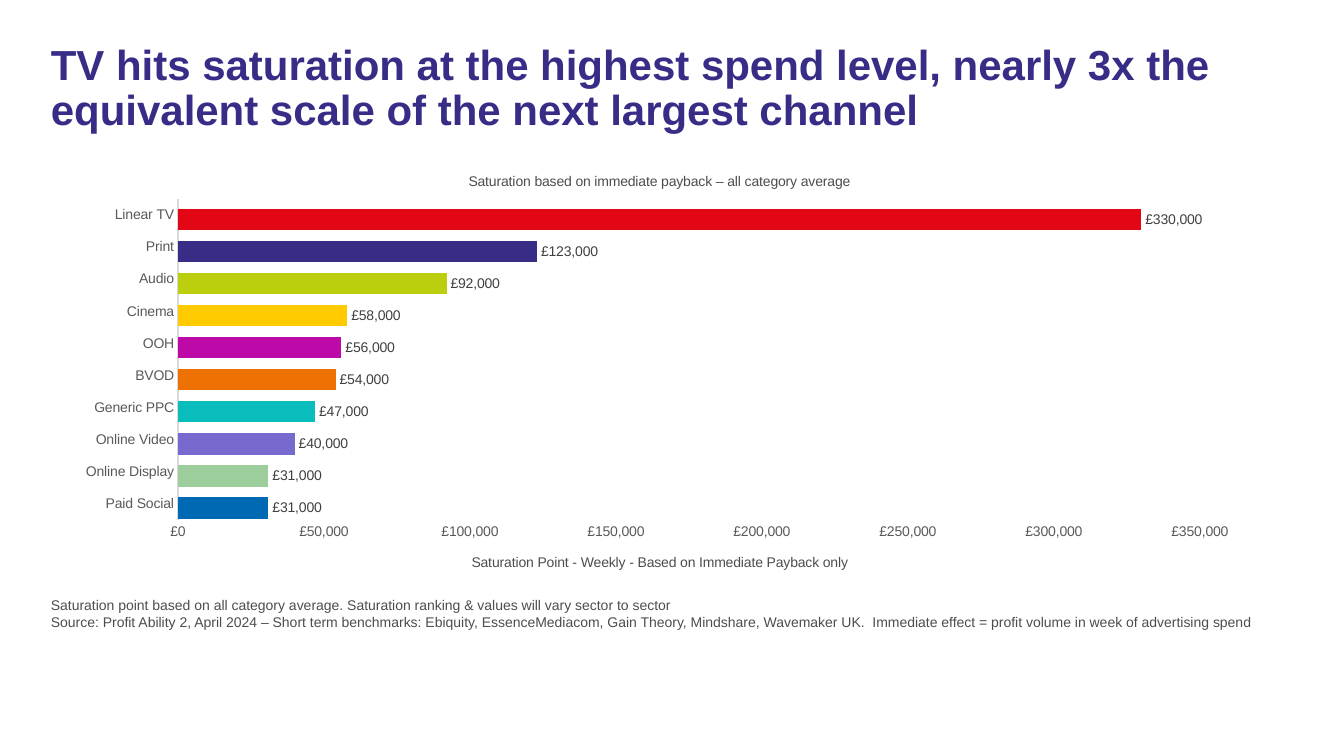
from lxml import etree
from pptx import Presentation
from pptx.chart.data import CategoryChartData
from pptx.dml.color import RGBColor
from pptx.enum.chart import XL_CHART_TYPE, XL_LABEL_POSITION, XL_TICK_MARK
from pptx.enum.text import MSO_ANCHOR
from pptx.oxml.ns import qn
from pptx.util import Pt

BAR = XL_CHART_TYPE.BAR_CLUSTERED
OUT_END = XL_LABEL_POSITION.OUTSIDE_END
NO_TICK = XL_TICK_MARK.NONE
TOP = MSO_ANCHOR.TOP
PX = 914400 / 100.8
POUNDS = '"£"#,##0'

THEME = {
    "face": "Arial",
    "head": {"size": Pt(30), "bold": True, "color": "372D87"},
    "note": {"size": Pt(10), "bold": False, "color": "4D4D4D"},
    "axis": {"size": Pt(10), "bold": False, "color": "595959"},
    "label": {"size": Pt(10), "bold": False, "color": "404040"},
    "line": "D9D9D9",
    "spare": ["0069B4", "E10514"],
}
CHANNELS = [
    ("Paid Social", 31000, "0069B4"),
    ("Online Display", 31000, "9CCD9A"),
    ("Online Video", 40000, "766ACE"),
    ("Generic PPC", 47000, "09BDBD"),
    ("BVOD", 54000, "EE7203"),
    ("OOH", 56000, "BD09A7"),
    ("Cinema", 58000, "FFCA00"),
    ("Audio", 92000, "BCCF0F"),
    ("Print", 123000, "372D87"),
    ("Linear TV", 330000, "E30615"),
]
TEXTS = [
    ((41, 39, 1250, 113), "head", 0.9, [
        "TV hits saturation at the highest spend level, nearly 3x the "
        "equivalent scale of the next largest channel"]),
    ((41, 592, 1250, 33), "note", 1.0, [
        "Saturation point based on all category average. "
        "Saturation ranking & values will vary sector to sector",
        "Source: Profit Ability 2, April 2024 – Short term benchmarks: "
        "Ebiquity, EssenceMediacom, Gain Theory, Mindshare, Wavemaker UK.  "
        "Immediate effect = profit volume in week of advertising spend"]),
]
FRAME = (61, 152, 1190, 436)


def style(font, role):
    font.name = THEME["face"]
    for key, value in THEME[role].items():
        if key == "color":
            font.color.rgb = RGBColor.from_string(value)
        else:
            setattr(font, key, value)


def place(node, index, **spots):
    """Pin a chart part at slide px, stored as shares of the chart frame."""
    for old in node.findall(qn("c:layout")):
        node.remove(old)
    layout = etree.Element(qn("c:layout"))
    manual = etree.SubElement(layout, qn("c:manualLayout"))
    if "w" in spots:
        etree.SubElement(manual, qn("c:layoutTarget")).set("val", "inner")
    for key in "xy":
        etree.SubElement(manual, qn(f"c:{key}Mode")).set("val", "edge")
    for key, value in spots.items():
        start = {"x": FRAME[0], "y": FRAME[1]}.get(key, 0)
        span = FRAME[2] if key in "xw" else FRAME[3]
        share = f"{(value - start) / span:.4f}"
        etree.SubElement(manual, qn(f"c:{key}")).set("val", share)
    node.insert(index, layout)


deck = Presentation()
deck.slide_width, deck.slide_height = round(1344 * PX), round(756 * PX)
slide = deck.slides.add_slide(deck.slide_layouts[6])

for box, role, gap, lines in TEXTS:
    frame = slide.shapes.add_textbox(*(round(n * PX) for n in box)).text_frame
    frame.word_wrap = True
    frame.vertical_anchor = TOP
    for i, line in enumerate(lines):
        para = frame.add_paragraph() if i else frame.paragraphs[0]
        para.line_spacing = gap
        run = para.add_run()
        run.text = line
        style(run.font, role)

names, values, colors = zip(*CHANNELS)
data = CategoryChartData(number_format=POUNDS)
data.categories = names
data.add_series("Series 1", values)
for name in ("Series 2", "Series 3"):
    data.add_series(name, [None] * len(names))
chart = slide.shapes.add_chart(BAR, *(round(n * PX) for n in FRAME), data).chart
chart.has_legend = False
style(chart.font, "axis")

plot = chart.plots[0]
plot.gap_width, plot.overlap, plot.vary_by_categories = 10, 80, False
for series, color in zip(plot.series, ["372D87", *THEME["spare"]]):
    series.format.fill.solid()
    series.format.fill.fore_color.rgb = RGBColor.from_string(color)
    series.invert_if_negative = False
main = plot.series[0]
for i, color in enumerate(colors):
    fill = main.points[i].format.fill
    fill.solid()
    fill.fore_color.rgb = RGBColor.from_string(color)
labels = main.data_labels
for key, value in {"show_value": True, "position": OUT_END,
                   "number_format": POUNDS,
                   "number_format_is_linked": False}.items():
    setattr(labels, key, value)
style(labels.font, "label")

cats, vals = chart.category_axis, chart.value_axis
for axis in (cats, vals):
    axis.major_tick_mark = axis.minor_tick_mark = NO_TICK
    axis.has_major_gridlines = False
    style(axis.tick_labels.font, "axis")
cats.format.line.color.rgb = RGBColor.from_string(THEME["line"])
cats.format.line.width = Pt(0.75)
vals.format.line.fill.background()
vals.minimum_scale, vals.maximum_scale, vals.major_unit = 0, 350000, 50000
vals.tick_labels.number_format = POUNDS
vals.tick_labels.number_format_is_linked = False

for title, text, x, y in [
    (chart.chart_title,
     "Saturation based on immediate payback – all category average", 466, 170),
    (vals.axis_title,
     "Saturation Point - Weekly - Based on Immediate Payback only", 469, 551),
]:
    run = title.text_frame.paragraphs[0].add_run()
    run.text = text
    style(run.font, "note")
    place(title._element, 1, x=x, y=y)
place(chart._chartSpace.chart.plotArea, 0, x=178, y=199, w=1022, h=321)

deck.save("out.pptx")
